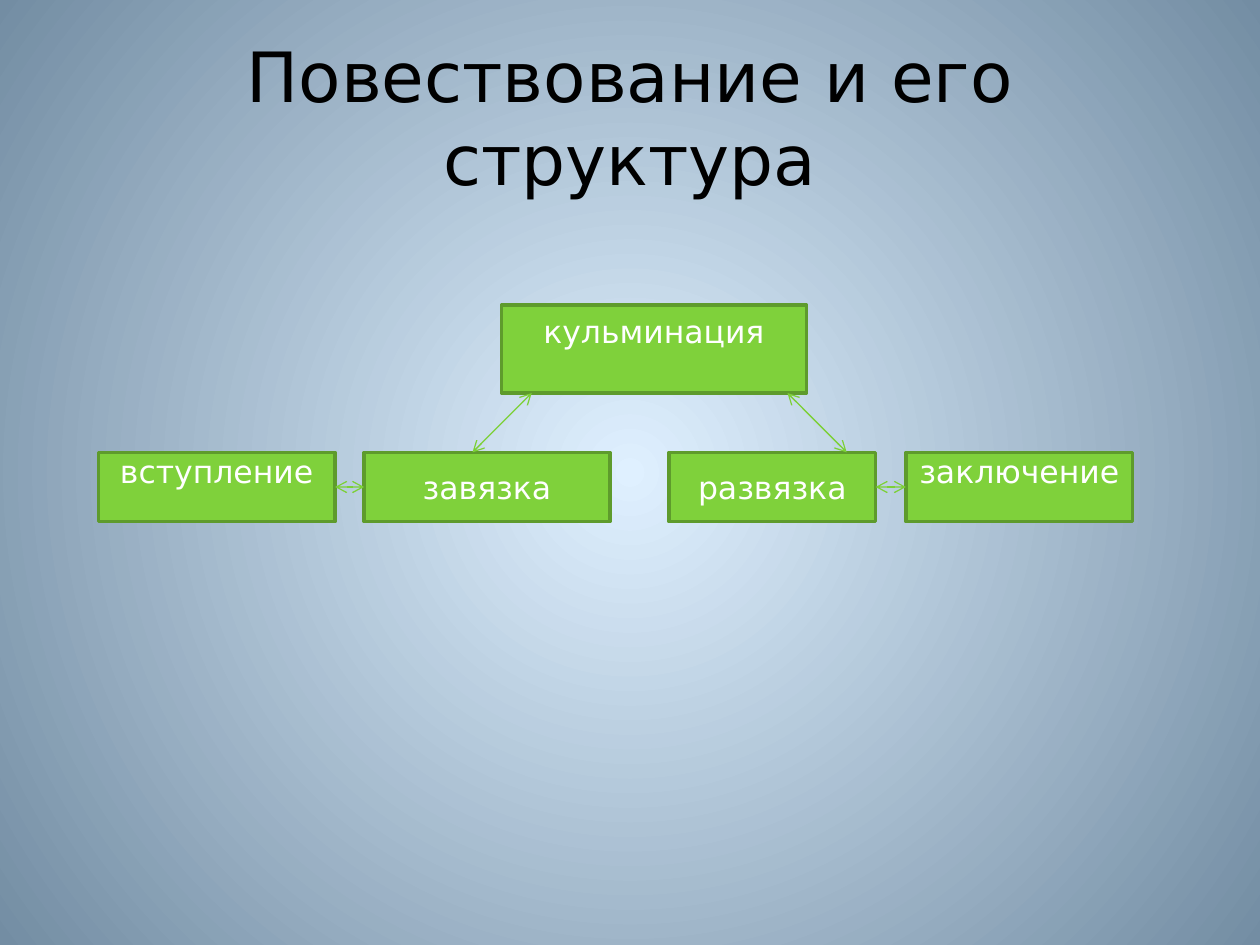
from dataclasses import dataclass

from lxml.etree import SubElement
from pptx import Presentation
from pptx.dml.color import RGBColor
from pptx.enum.shapes import MSO_CONNECTOR, MSO_SHAPE
from pptx.enum.text import MSO_ANCHOR, MSO_AUTO_SIZE, PP_ALIGN
from pptx.oxml.ns import qn
from pptx.util import Inches, Pt


@dataclass(frozen=True)
class Theme:
    font: str = "DejaVu Sans"
    title_size: float = 39.6
    label_size: float = 18
    title_color: str = "000000"
    label_color: str = "FFFFFF"
    box_fill: str = "7FD13B"
    box_line: str = "5E9B2C"
    arrow: str = "7CD036"
    glow: str = "DFF0FF"
    edge: str = "738DA3"


THEME = Theme()
LINE_HEIGHT = 0.29  # inches, one label line

# Diagram rows: top and height in inches
PEAK_ROW = (2.42, 0.7)
STAGE_ROW = (3.59, 0.55)

# Row, left, width, and whether the label is raised by half a line
STAGES = {
    "вступление": (STAGE_ROW, 0.78, 1.88, True),
    "завязка": (STAGE_ROW, 2.89, 1.95, False),
    "кульминация": (PEAK_ROW, 3.98, 2.42, True),
    "развязка": (STAGE_ROW, 5.31, 1.64, False),
    "заключение": (STAGE_ROW, 7.19, 1.8, True),
}


def color(value):
    return RGBColor.from_string(value)


def format_text(text_frame, size, text_color):
    for paragraph in text_frame.paragraphs:
        paragraph.alignment = PP_ALIGN.CENTER
        for run in paragraph.runs:
            run.font.name = THEME.font
            run.font.size = Pt(size)
            run.font.color.rgb = color(text_color)


def paint_background(slide):
    fill = slide.background.fill
    fill.gradient()
    for stop, value, position in zip(fill.gradient_stops, (THEME.glow, THEME.edge), (0, 1)):
        stop.color.rgb = color(value)
        stop.position = position
    # Radial gradient from the slide's centre
    gradient = next(slide.element.iter(qn("a:gradFill")))
    for linear in gradient.findall(qn("a:lin")):
        gradient.remove(linear)
    radial = SubElement(gradient, qn("a:path"), path="circle")
    SubElement(radial, qn("a:fillToRect"), l="50000", t="50000", r="50000", b="50000")


def place_title(slide, text, left, top, width, height):
    title = slide.shapes.title
    title.left, title.top = Inches(left), Inches(top)
    title.width, title.height = Inches(width), Inches(height)
    text_frame = title.text_frame
    text_frame.text = text
    text_frame.word_wrap = True
    text_frame.auto_size = MSO_AUTO_SIZE.NONE
    text_frame.vertical_anchor = MSO_ANCHOR.MIDDLE
    format_text(text_frame, THEME.title_size, THEME.title_color)


def add_stage(slide, label, row, left, width, raised):
    top, height = row
    box = slide.shapes.add_shape(
        MSO_SHAPE.FLOWCHART_PROCESS, Inches(left), Inches(top), Inches(width), Inches(height))
    box.shadow.inherit = False
    box.fill.solid()
    box.fill.fore_color.rgb = color(THEME.box_fill)
    box.line.color.rgb = color(THEME.box_line)
    box.line.width = Pt(2)
    text_frame = box.text_frame
    text_frame.text = label
    text_frame.word_wrap = True
    text_frame.margin_left = text_frame.margin_right = Inches(0.05)
    text_frame.vertical_anchor = MSO_ANCHOR.MIDDLE
    if raised:
        text_frame.vertical_anchor = MSO_ANCHOR.TOP
        text_frame.margin_top = Inches(max(0, height / 2 - LINE_HEIGHT))
        text_frame.margin_bottom = 0
    format_text(text_frame, THEME.label_size, THEME.label_color)


def add_double_arrow(slide, start, end):
    arrow = slide.shapes.add_connector(
        MSO_CONNECTOR.STRAIGHT, *(Inches(value) for value in (*start, *end)))
    arrow.line.color.rgb = color(THEME.arrow)
    arrow.line.width = Pt(0.75)
    properties = arrow.element.spPr
    outline = properties.find(qn("a:ln"))
    for tag in ("a:headEnd", "a:tailEnd"):
        SubElement(outline, qn(tag), type="arrow")
    SubElement(properties, qn("a:effectLst"))


def draw_diagram(slide):
    for label, placement in STAGES.items():
        add_stage(slide, label, *placement)

    # Diagonal arrows between the peak and its neighbours
    peak_bottom, stage_top = sum(PEAK_ROW), STAGE_ROW[0]
    for peak_x, stage_x in ((6.25, 6.72), (4.22, 3.75)):
        add_double_arrow(slide, (peak_x, peak_bottom), (stage_x, stage_top))

    # Short arrows across the gaps of the lower row
    middle = STAGE_ROW[0] + STAGE_ROW[1] / 2
    for first, second in (("вступление", "завязка"), ("развязка", "заключение")):
        _, left, width, _ = STAGES[first]
        add_double_arrow(slide, (left + width, middle), (STAGES[second][1], middle))


def main():
    presentation = Presentation()
    presentation.slide_width, presentation.slide_height = Inches(10), Inches(7.5)
    slide = presentation.slides.add_slide(presentation.slide_layouts.get_by_name("Title Only"))
    paint_background(slide)
    place_title(slide, "Повествование и его структура", 0.5, 0.3, 9, 1.25)
    draw_diagram(slide)
    presentation.save("out.pptx")


if __name__ == "__main__":
    main()
